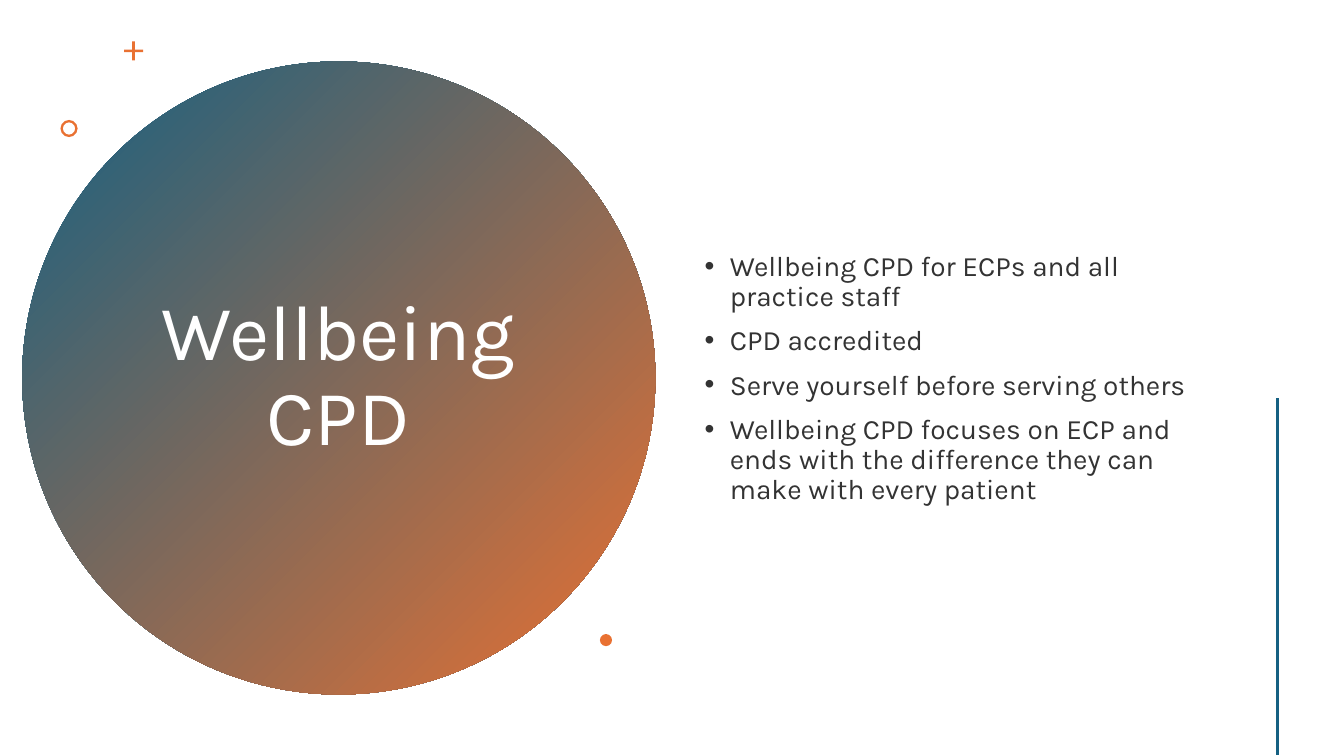
from lxml.etree import SubElement
from pptx import Presentation
from pptx.dml.color import RGBColor
from pptx.enum.shapes import MSO_CONNECTOR as Connector, MSO_SHAPE as Shape
from pptx.enum.text import MSO_ANCHOR as Anchor, PP_ALIGN as Align
from pptx.oxml.ns import qn
from pptx.util import Inches, Pt

COLOURS = {"blue": "156082", "orange": "E97132", "white": "FFFFFF", "text": "333333"}
FONT = "Karla"
BULLETS = [
    "Wellbeing CPD for ECPs and all practice staff",
    "CPD accredited",
    "Serve yourself before serving others",
    "Wellbeing CPD focuses on ECP and ends with the difference they can make with every patient",
]


def colour(name):
    return RGBColor.from_string(COLOURS[name])


def add_plain_shape(slide, kind, box, fill="orange"):
    shape = slide.shapes.add_shape(kind, *map(Inches, box))
    shape.shadow.inherit = False
    shape.line.fill.background()
    shape.fill.solid()
    shape.fill.fore_color.rgb = colour(fill)
    return shape


def add_text(slide, box, lines, size, fill, formats, bullet=None):
    frame = slide.shapes.add_textbox(*map(Inches, box)).text_frame
    frame.word_wrap = True
    frame.vertical_anchor = Anchor.MIDDLE
    for index, line in enumerate(lines):
        paragraph = frame.paragraphs[0] if index == 0 else frame.add_paragraph()
        paragraph.text = line
        for name, value in formats.items():
            setattr(paragraph, name, value)
        if index:
            paragraph.space_before = Pt(10)
        if bullet:
            properties = paragraph._p.get_or_add_pPr()
            properties.set("marL", str(Inches(0.25)))
            properties.set("indent", str(Inches(-0.25)))
            SubElement(properties, qn("a:buFont"), typeface="Arial")
            SubElement(properties, qn("a:buChar"), char=bullet)
        font = paragraph.runs[0].font
        for name, value in {"name": FONT, "size": Pt(size)}.items():
            setattr(font, name, value)
        font.color.rgb = colour(fill)


def add_title_circle(slide, left, top, size):
    circle = add_plain_shape(slide, Shape.OVAL, (left, top, size, size))
    circle.fill.gradient()
    circle.fill.gradient_angle = 315
    for stop, name in zip(circle.fill.gradient_stops, ("blue", "orange")):
        stop.color.rgb = colour(name)
    add_text(slide, (left + 1.14, top + 0.8, 3.99, 4.67), ["Wellbeing CPD"], 56, "white",
             {"alignment": Align.CENTER, "line_spacing": 0.9})
    plus = add_plain_shape(slide, Shape.CROSS, (left + 1.01, top - 0.2, 0.19, 0.19))
    plus.adjustments[0] = 0.43
    ring = add_plain_shape(slide, Shape.DONUT, (left + 0.38, top + 0.58, 0.17, 0.17))
    ring.adjustments[0] = 0.14
    add_plain_shape(slide, Shape.OVAL, (left + 5.73, top + 5.68, 0.12, 0.12))


def add_bullet_list(slide, left, top, width, height):
    add_text(slide, (left, top, width, height), BULLETS, 20, "text",
             {"alignment": Align.LEFT, "line_spacing": 0.9}, bullet="•")


def add_side_line(slide, left, top, height):
    line = slide.shapes.add_connector(
        Connector.STRAIGHT, *map(Inches, (left, top, left, top + height)))
    line.line.width = Pt(2)
    line.line.color.rgb = colour("blue")
    SubElement(line._element.spPr, qn("a:effectLst"))


def main():
    presentation = Presentation()
    presentation.slide_width = Inches(13.33)
    presentation.slide_height = Inches(7.5)
    slide = presentation.slides.add_slide(presentation.slide_layouts[6])
    add_title_circle(slide, 0.22, 0.61, 6.28)
    add_bullet_list(slide, 6.89, 0.57, 5.22, 6.38)
    add_side_line(slide, 12.67, 3.95, 3.54)
    presentation.save("out.pptx")


if __name__ == "__main__":
    main()
